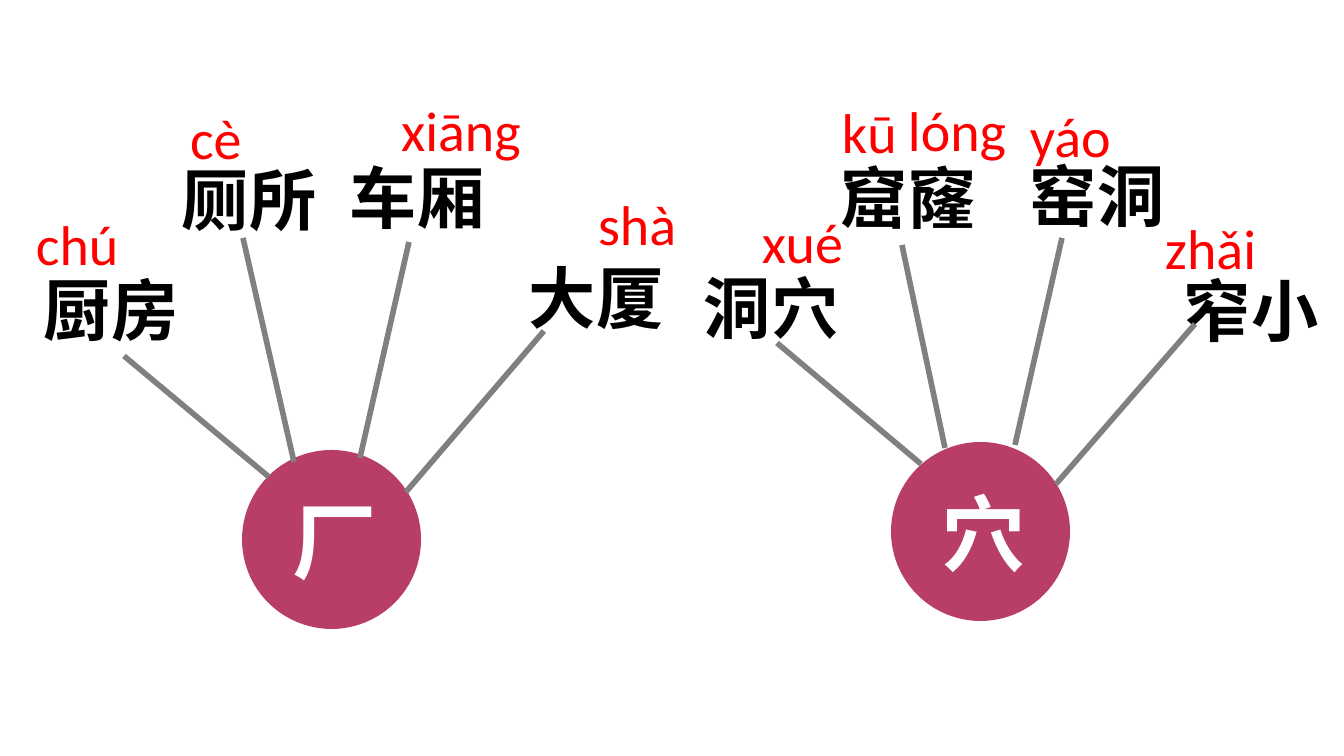
from pptx import Presentation
from pptx.dml.color import RGBColor
from pptx.enum.shapes import MSO_CONNECTOR as Link, MSO_SHAPE as Shape
from pptx.oxml.ns import qn
from pptx.util import Pt
from lxml.etree import SubElement

SCALE = 914400 / 134.4
BLACK = RGBColor(0, 0, 0)
WHITE = RGBColor(255, 255, 255)
RED = RGBColor(255, 0, 0)
GRAY = RGBColor(128, 128, 128)
ROSE = RGBColor(0xB8, 0x3D, 0x68)
HAN = "Noto Sans CJK SC"
LATIN = "Calibri"
WIDE = (13, 7)
SLIM = (9, 5)

WORDS = [
    ("洞穴", 695, 261, SLIM),
    ("窑洞", 1021, 149, SLIM),
    ("窟窿", 832, 151, SLIM),
    ("厨房", 31, 261, WIDE),
    ("厕所", 169, 151, WIDE),
    ("车厢", 337, 149, WIDE),
    ("大厦", 516, 249, WIDE),
    ("窄小", 1171, 262, WIDE),
]
SOUNDS = [
    ("chú", 23, 203, 125, WIDE),
    ("cè", 177, 97, 83, WIDE),
    ("xiāng", 388, 89, 163, WIDE),
    ("shà", 585, 183, 163, WIDE),
    ("xué", 753, 203, 140, SLIM),
    ("kū", 833, 93, 87, SLIM),
    ("lóng", 899, 91, 138, SLIM),
    ("yáo", 1021, 97, 125, SLIM),
    ("zhǎi", 1152, 207, 129, WIDE),
]
ROOTS = [("厂", 242, 450), ("穴", 891, 442)]
SPOKES = [
    (124, 356, 269, 477),
    (243, 238, 294, 462),
    (409, 242, 360, 458),
    (544, 331, 406, 492),
    (777, 343, 921, 464),
    (902, 245, 945, 448),
    (1062, 238, 1015, 445),
    (1195, 324, 1056, 484),
]


def px(*sizes):
    return [round(size * SCALE) for size in sizes]


def add_text(slide, text, box, face, size, color, inset=WIDE):
    frame = slide.shapes.add_textbox(*px(*box)).text_frame
    frame.word_wrap = True
    side, edge = px(*inset)
    frame.margin_left = frame.margin_right = side
    frame.margin_top = frame.margin_bottom = edge
    para = frame.paragraphs[0]
    para.text = text
    font = para.font
    font.name = face
    font.size = Pt(size)
    font.bold = face == HAN
    font.color.rgb = color
    props = para._p.get_or_add_pPr().find(qn("a:defRPr"))
    SubElement(props, qn("a:ea")).set("typeface", face)


def add_word(slide, text, x, y, inset):
    box = (x, y, 191, 81 + 2 * inset[1])
    add_text(slide, text, box, HAN, 36, BLACK, inset)


def add_sound(slide, text, x, y, width, inset):
    box = (x, y, width, 68 + 2 * inset[1])
    add_text(slide, text, box, LATIN, 30, RED, inset)


def add_root(slide, text, x, y):
    disc = slide.shapes.add_shape(Shape.OVAL, *px(x, y, 179, 179))
    disc.shadow.inherit = False
    disc.fill.solid()
    disc.fill.fore_color.rgb = ROSE
    disc.line.fill.background()
    add_text(slide, text, (x + 37, y + 33, 126, 116), HAN, 45, WHITE)


def add_spoke(slide, *ends):
    spoke = slide.shapes.add_connector(Link.STRAIGHT, *px(*ends))
    spoke.line.color.rgb = GRAY
    spoke.line.width = Pt(3)
    SubElement(spoke._element.spPr, qn("a:effectLst"))


def main():
    deck = Presentation()
    deck.slide_width, deck.slide_height = px(1344, 756)
    slide = deck.slides.add_slide(deck.slide_layouts[6])
    for draw, rows in (
        (add_root, ROOTS),
        (add_word, WORDS),
        (add_sound, SOUNDS),
        (add_spoke, SPOKES),
    ):
        for row in rows:
            draw(slide, *row)
    deck.save("out.pptx")


if __name__ == "__main__":
    main()
